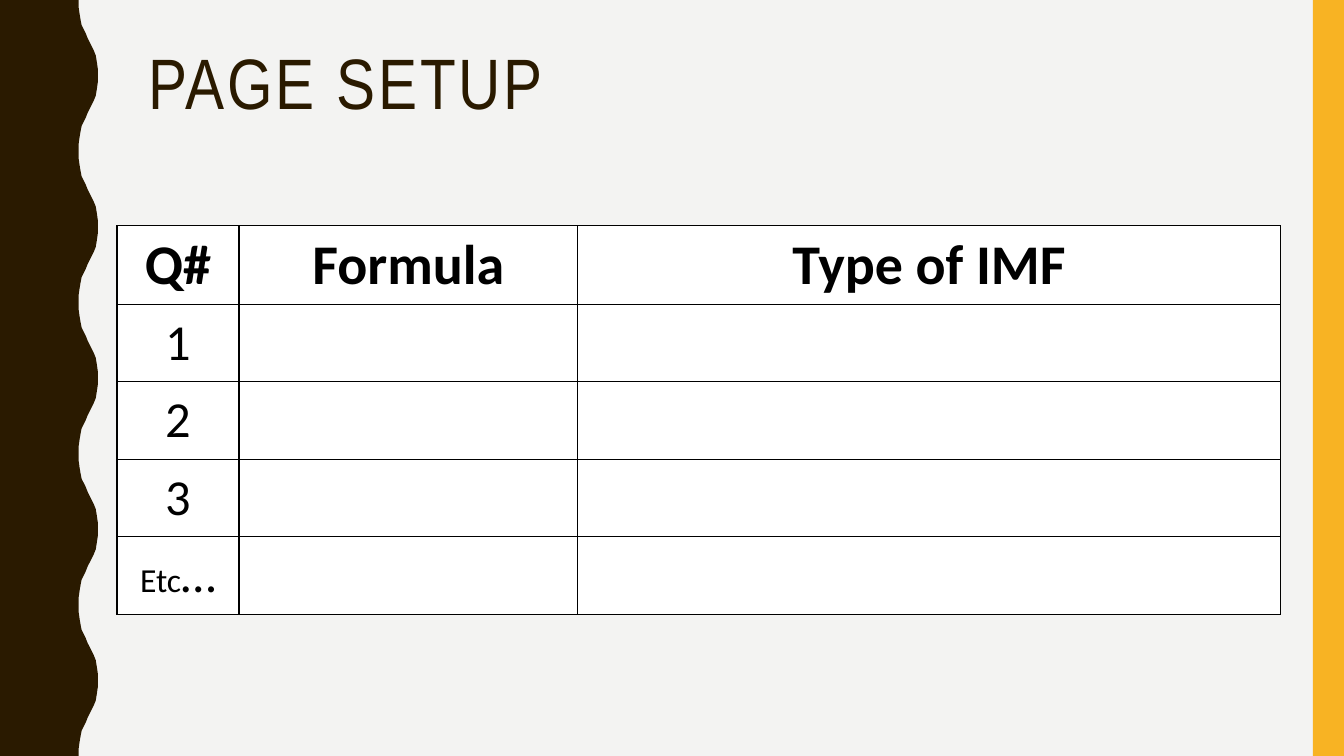
"""Build the Page Setup slide: a wavy side band and a blank answer table."""
from lxml.etree import SubElement
from pptx import Presentation
from pptx.dml.color import RGBColor as RGB
from pptx.enum.shapes import MSO_SHAPE as Shape
from pptx.enum.text import MSO_ANCHOR as Anchor, PP_ALIGN as Align
from pptx.oxml.ns import qn
from pptx.util import Inches, Pt

COLORS = {"paper": "F3F3F2", "brown": "2A1A00", "gold": "F8B323",
          "ink": "000000", "cell": "FFFFFF"}
TITLE = "PAGE SETUP"
HEADER = {"size": Pt(40), "bold": True}
NUMBER = {"size": Pt(36), "bold": False}
SMALL = {"size": Pt(24), "bold": False}
ROWS = [
    [[("Q#", HEADER)], [("Formula", HEADER)], [("Type of IMF", HEADER)]],
    [[("1", NUMBER)], [], []],
    [[("2", NUMBER)], [], []],
    [[("3", NUMBER)], [], []],
    [[("Etc", SMALL), ("…", NUMBER)], [], []],
]
COLUMN_WIDTHS = [1.21, 3.36, 6.97]
ROW_HEIGHT = 0.77
WIDTH, HEIGHT = 13.33, 7.5
GOLD_LEFT = 13.02
WAVE_COUNT = 5
HALF_WAVE = [(0.78, 0), (0.78, 0.07), (0.79, 0.14), (0.8, 0.2), (0.81, 0.25),
             (0.83, 0.29), (0.85, 0.33), (0.87, 0.38), (0.89, 0.42),
             (0.91, 0.46), (0.93, 0.5), (0.95, 0.55), (0.96, 0.61),
             (0.97, 0.68), (0.97, 0.75)]


def color(name):
    return RGB.from_string(COLORS[name])


def paint(shape, name):
    shape.fill.solid()
    shape.fill.fore_color.rgb = color(name)
    shape.line.fill.background()
    shape.shadow.inherit = False


def style(font, formats):
    for attribute, value in formats.items():
        setattr(font, attribute, value)


def add_wavy_band(slide):
    period = 2 * HALF_WAVE[-1][1]
    wave = HALF_WAVE + [(x, period - y) for x, y in HALF_WAVE[-2::-1]]
    edge = [(x, y + i * period) for i in range(WAVE_COUNT) for x, y in wave]
    outline = slide.shapes.build_freeform(0, 0)
    outline.add_line_segments([(Inches(x), Inches(y)) for x, y in edge + [(0, HEIGHT)]])
    paint(outline.convert_to_shape(), "brown")


def add_title(slide):
    title = slide.shapes.title
    title.left, title.top = Inches(1.37), Inches(0.42)
    title.width, title.height = Inches(11.13), Inches(1.63)
    title.text_frame.vertical_anchor = Anchor.TOP
    paragraph = title.text_frame.paragraphs[0]
    paragraph.alignment = Align.LEFT
    paragraph.line_spacing = 0.9
    run = paragraph.add_run()
    run.text = TITLE
    style(run.font, {"name": "Arial Narrow", "size": Pt(51), "bold": False})
    run.font.color.rgb = color("brown")
    run.font._element.set("spc", "200")


def add_borders(cell):
    properties = cell._tc.get_or_add_tcPr()
    for side in ("a:lnL", "a:lnR", "a:lnT", "a:lnB"):
        line = SubElement(properties, qn(side), w=str(Pt(1)))
        fill = SubElement(line, qn("a:solidFill"))
        SubElement(fill, qn("a:srgbClr"), val=COLORS["ink"])


def fill_cell(cell, pieces):
    add_borders(cell)
    cell.fill.solid()
    cell.fill.fore_color.rgb = color("cell")
    cell.vertical_anchor = Anchor.MIDDLE
    paragraph = cell.text_frame.paragraphs[0]
    paragraph.alignment = Align.CENTER
    for text, formats in pieces:
        run = paragraph.add_run()
        run.text = text
        style(run.font, {"name": "Calibri", **formats})
        run.font.color.rgb = color("ink")


def add_answer_table(slide):
    table = slide.shapes.add_table(
        len(ROWS), len(COLUMN_WIDTHS), Inches(1.16), Inches(2.24),
        Inches(sum(COLUMN_WIDTHS)), Inches(ROW_HEIGHT * len(ROWS))).table
    table.horz_banding = False
    for column, width in zip(table.columns, COLUMN_WIDTHS):
        column.width = Inches(width)
    for row, contents in zip(table.rows, ROWS):
        row.height = Inches(ROW_HEIGHT)
        for cell, pieces in zip(row.cells, contents):
            fill_cell(cell, pieces)


def main():
    deck = Presentation()
    deck.slide_width, deck.slide_height = Inches(WIDTH), Inches(HEIGHT)
    slide = deck.slides.add_slide(deck.slide_layouts[5])
    slide.background.fill.solid()
    slide.background.fill.fore_color.rgb = color("paper")
    add_wavy_band(slide)
    gold_bar = slide.shapes.add_shape(
        Shape.RECTANGLE, Inches(GOLD_LEFT), 0, Inches(WIDTH - GOLD_LEFT), Inches(HEIGHT))
    paint(gold_bar, "gold")
    add_title(slide)
    add_answer_table(slide)
    deck.save("out.pptx")


if __name__ == "__main__":
    main()
